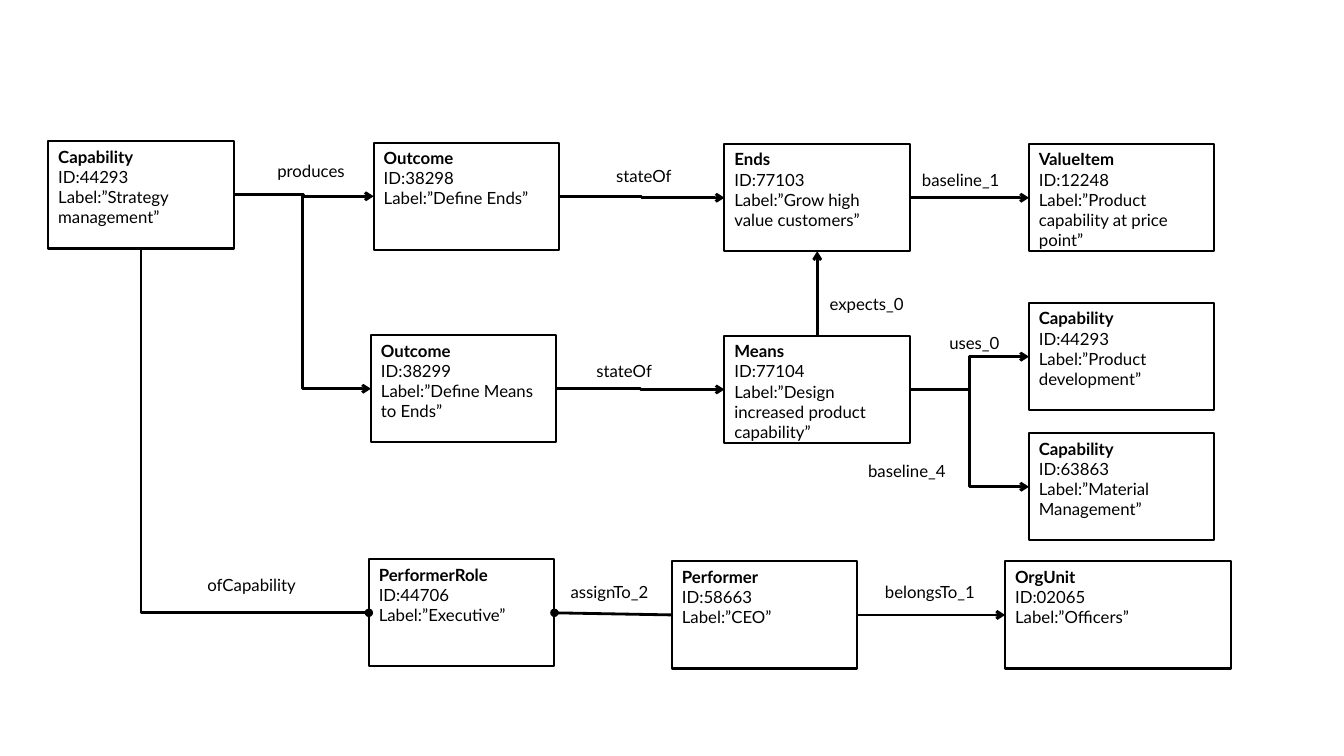
from dataclasses import dataclass

from lxml.etree import SubElement
from pptx import Presentation
from pptx.dml.color import RGBColor
from pptx.enum.shapes import MSO_CONNECTOR, MSO_SHAPE
from pptx.enum.text import MSO_ANCHOR, MSO_AUTO_SIZE, PP_ALIGN
from pptx.oxml.ns import qn
from pptx.util import Pt

TOP, LEFT, BOTTOM, RIGHT = range(4)
WIDE, HIGH = 132.5, 76.5


@dataclass(frozen=True)
class Theme:
    """Colours, font and sizes of the diagram."""
    ink: RGBColor = RGBColor(0, 0, 0)
    paper: RGBColor = RGBColor(255, 255, 255)
    font: str = "Lato"
    size: float = 12
    edge: float = 1.5
    link: float = 2


def apply(item, vals):
    """Set each named value on the item."""
    for name, val in vals.items():
        setattr(item, name, val)


class Chart:
    """Draws entity boxes, links and labels on one slide."""

    def __init__(self, slide, theme):
        """Keep the slide and the style."""
        self.shapes = slide.shapes
        self.theme = theme

    def letter(self, frame, lines, fit, title=False):
        """Fill a text frame, with the first line bold for a title."""
        apply(frame, {"word_wrap": True, "auto_size": fit,
                      "vertical_anchor": MSO_ANCHOR.TOP})
        for i, line in enumerate(lines):
            para = frame.add_paragraph() if i else frame.paragraphs[0]
            para.alignment = PP_ALIGN.LEFT
            run = para.add_run()
            run.text = line
            apply(run.font, {"name": self.theme.font, "size": Pt(self.theme.size),
                             "bold": title and i == 0})
            run.font.color.rgb = self.theme.ink

    def box(self, left, top, kind, code, label, wide=WIDE, alpha=None):
        """Add an entity box with its kind, ID and label."""
        box = self.shapes.add_shape(MSO_SHAPE.RECTANGLE,
                                    Pt(left), Pt(top), Pt(wide), Pt(HIGH))
        box.shadow.inherit = False
        box.fill.solid()
        box.fill.fore_color.rgb = self.theme.paper
        if alpha:
            tint = box._element.spPr.find(qn("a:solidFill"))[0]
            SubElement(tint, qn("a:alpha")).set("val", str(alpha * 1000))
        box.line.color.rgb = self.theme.ink
        box.line.width = Pt(self.theme.edge)
        lines = (kind, f"ID:{code}", f"Label:”{label}”")
        self.letter(box.text_frame, lines, MSO_AUTO_SIZE.NONE, title=True)
        return box

    def label(self, left, top, text):
        """Add the name of a link."""
        note = self.shapes.add_textbox(Pt(left), Pt(top), Pt(80), Pt(21.8))
        self.letter(note.text_frame, [text], MSO_AUTO_SIZE.SHAPE_TO_FIT_TEXT)

    def link(self, goal, side, start, exit_side, tip="arrow",
             kind=MSO_CONNECTOR.ELBOW, bend=None):
        """Join two boxes, with the tip on the goal."""
        line = self.shapes.add_connector(kind, 0, 0, 0, 0)
        line.begin_connect(goal, side)
        line.end_connect(start, exit_side)
        line.line.color.rgb = self.theme.ink
        line.line.width = Pt(self.theme.link)
        props = line._element.spPr
        if bend:
            props.find(qn("a:prstGeom")).set("prst", bend)
        SubElement(props.find(qn("a:ln")), qn("a:headEnd")).set("type", tip)
        SubElement(props, qn("a:effectLst"))


BOXES = {
    "plan": (34.5, 101, "Capability", "44293", "Strategy management"),
    "role": (263.5, 399.5, "PerformerRole", "44706", "Executive", WIDE, 49),
    "chief": (480, 401, "Performer", "58663", "CEO"),
    "unit": (718, 401, "OrgUnit", "02065", "Officers", 161.5),
    "ends": (517.5, 103, "Ends", "77103", "Grow high value customers"),
    "aim": (267, 102, "Outcome", "38298", "Define Ends"),
    "way": (265, 239.5, "Outcome", "38299", "Define Means to Ends"),
    "means": (517.5, 240, "Means", "77104", "Design increased product capability"),
    "value": (735, 103, "ValueItem", "12248", "Product capability at price point"),
    "goods": (735, 216.5, "Capability", "44293", "Product development"),
    "stock": (735, 309.5, "Capability", "63863", "Material Management"),
}
FLOWS = [("plan", "aim"), ("plan", "way"), ("aim", "ends"), ("way", "means"),
         ("ends", "value"), ("means", "goods"), ("means", "stock"),
         ("chief", "unit")]
LABELS = [
    (141, 407, "ofCapability"), (400.5, 412, "assignTo_2"),
    (625, 412, "belongsTo_1"), (191, 111.5, "produces"),
    (433, 114.5, "stateOf"), (419, 254, "stateOf"),
    (651.5, 117.5, "baseline_1"), (585.5, 206, "expects_0"),
    (671, 234, "uses_0"), (613, 325.5, "baseline_4"),
]


def main():
    """Build and save the slide."""
    deck = Presentation()
    apply(deck, {"slide_width": Pt(960), "slide_height": Pt(540)})
    chart = Chart(deck.slides.add_slide(deck.slide_layouts[6]), Theme())
    boxes = {name: chart.box(*vals) for name, vals in BOXES.items()}
    for start, goal in FLOWS:
        chart.link(boxes[goal], LEFT, boxes[start], RIGHT)
    chart.link(boxes["ends"], BOTTOM, boxes["means"], TOP,
               kind=MSO_CONNECTOR.STRAIGHT)
    chart.link(boxes["role"], RIGHT, boxes["chief"], LEFT, "oval",
               MSO_CONNECTOR.STRAIGHT)
    chart.link(boxes["role"], LEFT, boxes["plan"], BOTTOM, "oval",
               bend="bentConnector2")
    for vals in LABELS:
        chart.label(*vals)
    deck.save("out.pptx")


if __name__ == "__main__":
    main()
